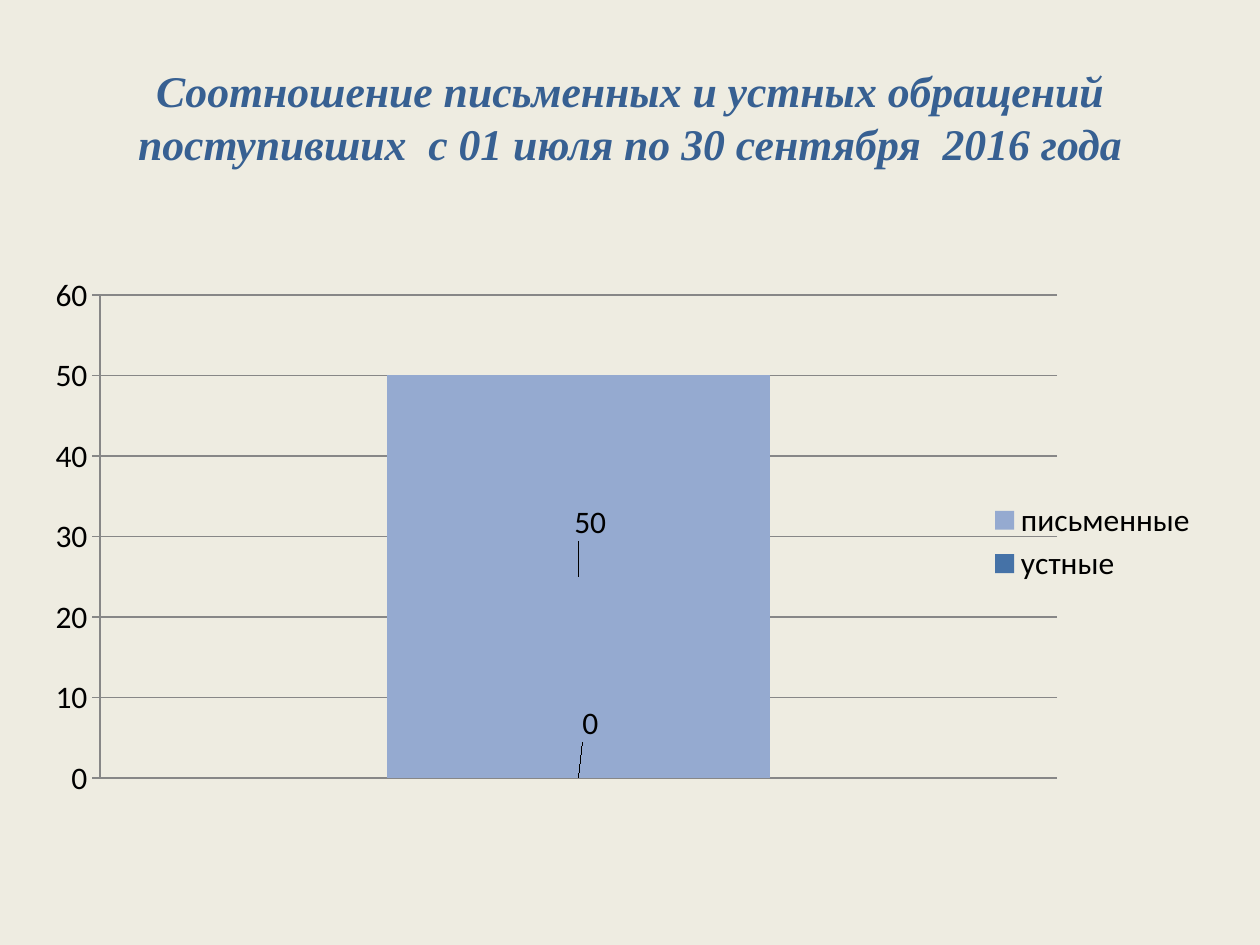
from dataclasses import dataclass

from lxml import etree
from pptx import Presentation
from pptx import util as u
from pptx.chart.data import CategoryChartData
from pptx.dml.color import RGBColor
from pptx.enum import chart as ch
from pptx.enum import text
from pptx.oxml.ns import qn


@dataclass(frozen=True)
class Theme:
    back: RGBColor = RGBColor(0xEE, 0xEC, 0xE1)
    head: RGBColor = RGBColor(0x37, 0x60, 0x92)
    ink: RGBColor = RGBColor(0, 0, 0)
    grid: RGBColor = RGBColor(0x87, 0x87, 0x87)
    serif: str = "Times New Roman"
    sans: str = "Calibri"
    big: u.Pt = u.Pt(25)
    body: u.Pt = u.Pt(18)


@dataclass(frozen=True)
class Group:
    name: str
    count: int
    color: RGBColor
    shift: dict[str, float]


THEME = Theme()
GROUPS = [
    Group("устные", 0, RGBColor(0x45, 0x72, 0xA7), {"x": 0.01, "y": -0.1}),
    Group("письменные", 50, RGBColor(0x95, 0xAA, 0xD0), {"x": 0.01, "y": -0.1}),
]


def place(node, index: int, target: str = "", **parts: float) -> None:
    """Give a chart element a manual layout, as fractions of the chart."""
    for old in node.findall(qn("c:layout")):
        node.remove(old)
    layout = etree.Element(qn("c:layout"))
    manual = etree.SubElement(layout, qn("c:manualLayout"))
    if target:
        etree.SubElement(manual, qn("c:layoutTarget"), val=target)
        for side in "xy":
            etree.SubElement(manual, qn(f"c:{side}Mode"), val="edge")
    for key, part in parts.items():
        etree.SubElement(manual, qn(f"c:{key}"), val=str(part))
    node.insert(index, layout)


def add_title(slide) -> None:
    title = slide.shapes.title
    title.left, title.top = u.Inches(0.5), u.Inches(0.3)
    title.width, title.height = u.Inches(9), u.Inches(1.25)
    frame = title.text_frame
    frame.vertical_anchor = text.MSO_ANCHOR.MIDDLE
    frame.text = (
        "Соотношение письменных и устных обращений\v"
        "поступивших  с 01 июля по 30 сентября  2016 года"
    )
    line = frame.paragraphs[0]
    line.alignment = text.PP_ALIGN.CENTER
    font = line.font
    font.name, font.size = THEME.serif, THEME.big
    font.bold = font.italic = True
    font.color.rgb = THEME.head


def style_bar(bar, group: Group) -> None:
    bar.format.fill.solid()
    bar.format.fill.fore_color.rgb = group.color
    bar.data_labels.show_value = True
    bar.points[0].data_label.position = ch.XL_LABEL_POSITION.CENTER
    label = bar._element.find(".//" + qn("c:dLbl"))
    place(label, 1, **group.shift)


def style_axes(chart) -> None:
    chart.category_axis.visible = False
    axis = chart.value_axis
    axis.minimum_scale, axis.maximum_scale, axis.major_unit = 0, 60, 10
    axis.major_tick_mark = ch.XL_TICK_MARK.OUTSIDE
    axis.has_major_gridlines = True
    for form in (axis.format, axis.major_gridlines.format):
        form.line.color.rgb = THEME.grid
        form.line.width = u.Pt(0.75)


def add_chart(slide) -> None:
    data = CategoryChartData()
    data.categories = ["1"]
    for group in GROUPS:
        data.add_series(group.name, [group.count])
    chart = slide.shapes.add_chart(
        ch.XL_CHART_TYPE.COLUMN_STACKED,
        u.Inches(0.23), u.Inches(2.19), u.Inches(9.38), u.Inches(4.33), data,
    ).chart
    chart.has_title = False
    chart.font.name, chart.font.size = THEME.sans, THEME.body
    chart.font.color.rgb = THEME.ink
    style_axes(chart)

    plot = chart.plots[0]
    plot.vary_by_categories = False
    plot.gap_width, plot.overlap = 150, 100
    for bar, group in zip(plot.series, GROUPS):
        style_bar(bar, group)

    chart.has_legend = True
    chart.legend.position = ch.XL_LEGEND_POSITION.RIGHT
    chart.legend.include_in_layout = False
    place(chart.legend._element, 1, "", x=0.81, y=0.4, w=0.18, h=0.17)
    for mode in ("yMode", "xMode"):
        manual = chart.legend._element.find(".//" + qn("c:manualLayout"))
        manual.insert(0, etree.Element(qn(f"c:{mode}"), val="edge"))
    area = chart._chartSpace.find(".//" + qn("c:plotArea"))
    place(area, 0, "inner", x=0.06, y=0.03, w=0.81, h=0.89)


def main() -> None:
    deck = Presentation()
    deck.slide_width, deck.slide_height = u.Inches(10), u.Inches(7.5)
    slide = deck.slides.add_slide(deck.slide_layouts[5])
    slide.background.fill.solid()
    slide.background.fill.fore_color.rgb = THEME.back
    add_title(slide)
    add_chart(slide)
    deck.save("out.pptx")


if __name__ == "__main__":
    main()
